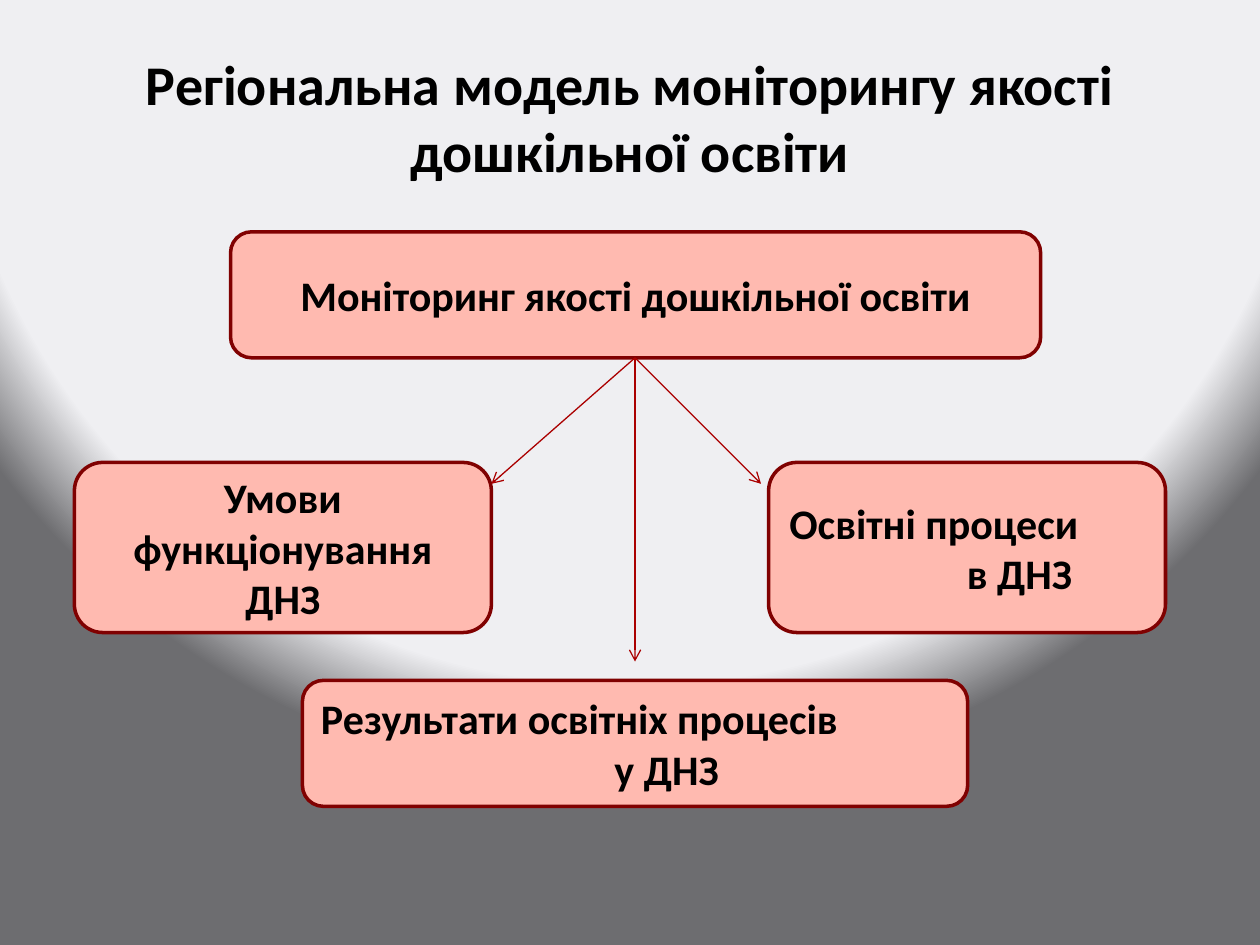
from dataclasses import dataclass
from pptx import Presentation
from pptx.dml.color import RGBColor as RGB
from pptx.enum.shapes import MSO_CONNECTOR as Link, MSO_SHAPE as Kind
from pptx.enum.text import MSO_ANCHOR as Anchor, PP_ALIGN as Align
from pptx.oxml import parse_xml
from pptx.oxml.ns import nsdecls
from pptx.util import Inches, Pt

COLS, ROWS = 100, 75  # grid over the slide
WIDE, HIGH = Inches(10), Inches(7.5)


@dataclass(frozen=True)
class Theme:
    face: str = "Calibri"
    ink: str = "000000"
    fill: str = "FFBAB0"
    edge: str = "800101"
    arrow: str = "AA0000"
    glow: tuple = ((0, "F2F2F4"), (87, "EFEFF2"), (100, "6D6D70"))
    head: int = 32
    body: int = 24
    rim: float = 2
    thin: float = 0.75


T = Theme()


def col(n):
    return round(WIDE * n / COLS)


def row(n):
    return round(HIGH * n / ROWS)


def put(item, values):
    for name, value in values.items():
        setattr(item, name, value)


def place(shape, x, y, w, h):
    put(shape, {"left": col(x), "top": row(y), "width": col(w), "height": row(h)})


def write(shape, lines, size, align=Align.CENTER):
    """Fill a shape with (text, indent in columns) lines."""
    frame = shape.text_frame
    put(frame, {"word_wrap": True, "vertical_anchor": Anchor.MIDDLE})
    frame.text = "\n".join(text for text, _ in lines)
    for para, (_, shift) in zip(frame.paragraphs, lines):
        para.alignment = align
        if shift:
            para._p.get_or_add_pPr().set("marL", str(col(shift)))
        font = para.runs[0].font
        put(font, {"name": T.face, "size": Pt(size), "bold": True})
        font.color.rgb = RGB.from_string(T.ink)


def paint(slide):
    """Round glow whose centre lies above the slide."""
    stops = "".join(
        f'<a:gs pos="{at * 1000}"><a:srgbClr val="{tone}"/></a:gs>'
        for at, tone in T.glow)
    slide._element.cSld.insert(0, parse_xml(
        f'<p:bg {nsdecls("p", "a")}><p:bgPr><a:gradFill rotWithShape="1">'
        f'<a:gsLst>{stops}</a:gsLst><a:path path="circle">'
        '<a:fillToRect l="50000" t="-80000" r="50000" b="180000"/></a:path>'
        '</a:gradFill><a:effectLst/></p:bgPr></p:bg>'))


def box(slide, area, lines, align=Align.CENTER):
    shape = slide.shapes.add_shape(Kind.ROUNDED_RECTANGLE, 0, 0, 0, 0)
    place(shape, *area)
    shape.shadow.inherit = False
    shape.fill.solid()
    shape.fill.fore_color.rgb = RGB.from_string(T.fill)
    shape.line.color.rgb = RGB.from_string(T.edge)
    shape.line.width = Pt(T.rim)
    write(shape, lines, T.body, align)


def arrow(slide, start, end):
    (x, y), (to_x, to_y) = start, end
    link = slide.shapes.add_connector(
        Link.STRAIGHT, col(x), row(y), col(to_x), row(to_y))
    link.line.color.rgb = RGB.from_string(T.arrow)
    link.line.width = Pt(T.thin)
    link.line._get_or_add_ln().append(
        parse_xml(f'<a:tailEnd {nsdecls("a")} type="arrow"/>'))
    link._element.spPr.append(parse_xml(f'<a:effectLst {nsdecls("a")}/>'))


def main():
    deck = Presentation()
    put(deck, {"slide_width": WIDE, "slide_height": HIGH})
    slide = deck.slides.add_slide(deck.slide_layouts[5])
    paint(slide)

    # Title
    title = slide.shapes.title
    place(title, 5, 3, 90, 12.5)
    write(title, [("Регіональна модель моніторингу якості дошкільної освіти", 0)],
          T.head)

    # Main topic and its three parts
    side, tall = 36.7, 13.5
    box(slide, (18.3, 18.4, 64.3, 10),
        [("Моніторинг якості дошкільної освіти", 0)])
    box(slide, (5.9, side, 33.1, tall), [("Умови функціонування ДНЗ", 0)])
    box(slide, (24, 54, 52.8, 10),
        [("Результати освітніх процесів", 0), ("у ДНЗ", 23.3)], Align.LEFT)
    box(slide, (61, side, 31.5, tall),
        [("Освітні процеси", 0), ("в ДНЗ", 14.1)], Align.LEFT)

    # Arrows from the topic to each part
    hub = (50.4, 28.4)
    for end in ((60.4, 38.4), (39, 38.4), (50.4, 52.5)):
        arrow(slide, hub, end)

    deck.save("out.pptx")


if __name__ == "__main__":
    main()
